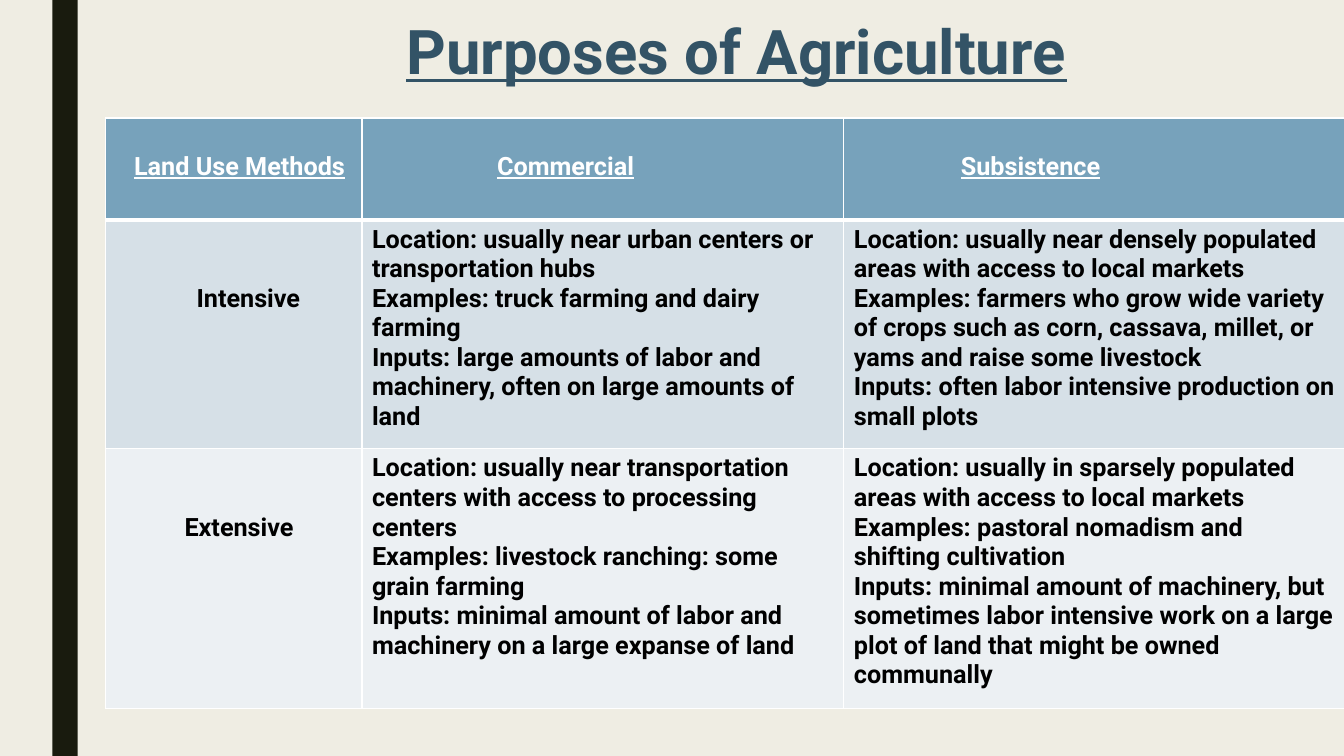
import pptx
import pptx.util
import pptx.dml.color
import pptx.enum.shapes
import pptx.enum.text
import pptx.oxml.ns
from lxml import etree

Inches = pptx.util.Inches
Pt = pptx.util.Pt
RGB = pptx.dml.color.RGBColor

CREAM = RGB(0xEF, 0xED, 0xE3)
DARK = RGB(0x19, 0x1B, 0x0E)
NAVY = RGB(0x33, 0x53, 0x66)
BLUE = RGB(0x77, 0xA2, 0xBB)
MIST = RGB(0xD6, 0xE0, 0xE7)
PALE = RGB(0xEC, 0xF0, 0xF3)
WHITE = RGB(0xFF, 0xFF, 0xFF)
BLACK = RGB(0, 0, 0)

COLS = [2.54, 4.78, 4.97]
ROWS = [1.01, 2.27, 2.58]
FILLS = [BLUE, MIST, PALE]
HEADS = ["Land Use Methods", "Commercial", "Subsistence"]
BODY = [
    ["Intensive",
     ["Location: usually near urban centers or transportation hubs",
      "Examples: truck farming and dairy farming",
      "Inputs: large amounts of labor and machinery, often on large amounts of land"],
     ["Location: usually near densely populated areas with access to local markets",
      "Examples: farmers who grow wide variety of crops such as corn, cassava, millet, "
      "or yams and raise some livestock",
      "Inputs: often labor intensive production on small plots"]],
    ["Extensive",
     ["Location: usually near transportation centers with access to processing centers",
      "Examples: livestock ranching: some grain farming",
      "Inputs: minimal amount of labor and machinery on a large expanse of land"],
     ["Location: usually in sparsely populated areas with access to local markets",
      "Examples: pastoral nomadism and shifting cultivation",
      "Inputs: minimal amount of machinery, but sometimes labor intensive work on a "
      "large plot of land that might be owned communally"]],
]
# Left and top insets of the cells that stand away from the corner
INSETS = {(0, 0): (0.28, 0.34), (0, 1): (1.34, 0.34), (0, 2): (1.16, 0.34),
          (1, 0): (0.9, 0.64), (2, 0): (0.78, 0.64)}


def write(frame, text, size=18, color=BLACK, under=False, space=None):
    lines = [text] if isinstance(text, str) else text
    for i, line in enumerate(lines):
        para = frame.add_paragraph() if i else frame.paragraphs[0]
        para.line_spacing = space
        run = para.add_run()
        run.text = line
        font = run.font
        font.name, font.size, font.bold = "Roboto", Pt(size), True
        font.underline = under
        font.color.rgb = color


def edge(cell, low):
    """Draw white borders; low is the width of the bottom one."""
    props = cell._tc.get_or_add_tcPr()
    qn = pptx.oxml.ns.qn
    for i, (side, width) in enumerate([("L", 1), ("R", 1), ("T", 1), ("B", low)]):
        line = etree.Element(qn("a:ln" + side), w=str(Pt(width)))
        fill = etree.SubElement(line, qn("a:solidFill"))
        etree.SubElement(fill, qn("a:srgbClr"), val=str(WHITE))
        props.insert(i, line)


def band(slide, x, y, w, h):
    bar = slide.shapes.add_shape(pptx.enum.shapes.MSO_SHAPE.RECTANGLE,
                                 Inches(x), Inches(y), Inches(w), Inches(h))
    bar.shadow.inherit = False
    bar.fill.solid()
    bar.fill.fore_color.rgb = DARK
    bar.line.fill.background()


def title(slide, x, y, w, h):
    frame = slide.shapes.add_textbox(Inches(x), Inches(y), Inches(w), Inches(h)).text_frame
    frame.word_wrap = True
    frame.margin_left = frame.margin_right = 0
    frame.vertical_anchor = pptx.enum.text.MSO_ANCHOR.BOTTOM
    write(frame, "Purposes of Agriculture", size=44, color=NAVY, under=True, space=0.89)


def grid(slide, x, y, w, h):
    table = slide.shapes.add_table(len(ROWS), len(COLS), Inches(x), Inches(y),
                                   Inches(w), Inches(h)).table
    for col, width in zip(table.columns, COLS):
        col.width = Inches(width)
    for r, words in enumerate([HEADS] + BODY):
        head = r == 0
        table.rows[r].height = Inches(ROWS[r])
        for c, text in enumerate(words):
            cell = table.cell(r, c)
            left, top = INSETS.get((r, c), (0.1, 0.05))
            cell.margin_left, cell.margin_top = Inches(left), Inches(top)
            cell.fill.solid()
            cell.fill.fore_color.rgb = FILLS[r]
            edge(cell, 3 if head else 1)
            write(cell.text_frame, text, color=WHITE if head else BLACK, under=head)


def main():
    deck = pptx.Presentation()
    deck.slide_width, deck.slide_height = Inches(13.33), Inches(7.5)
    slide = deck.slides.add_slide(deck.slide_layouts[6])
    slide.background.fill.solid()
    slide.background.fill.fore_color.rgb = CREAM
    band(slide, 0.52, 0, 0.25, 7.5)
    title(slide, 4.03, 0.15, 7.97, 0.77)
    grid(slide, 1.05, 1.17, sum(COLS), sum(ROWS))
    deck.save("out.pptx")


if __name__ == "__main__":
    main()
